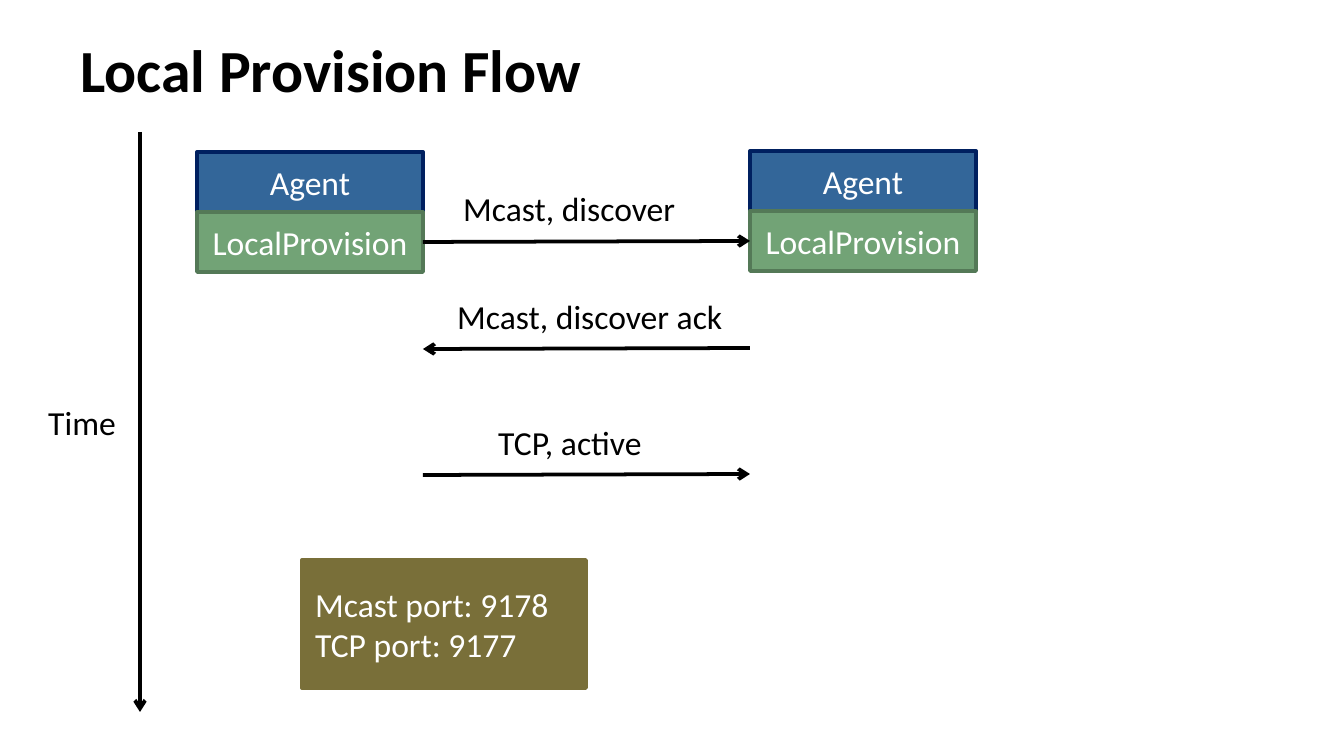
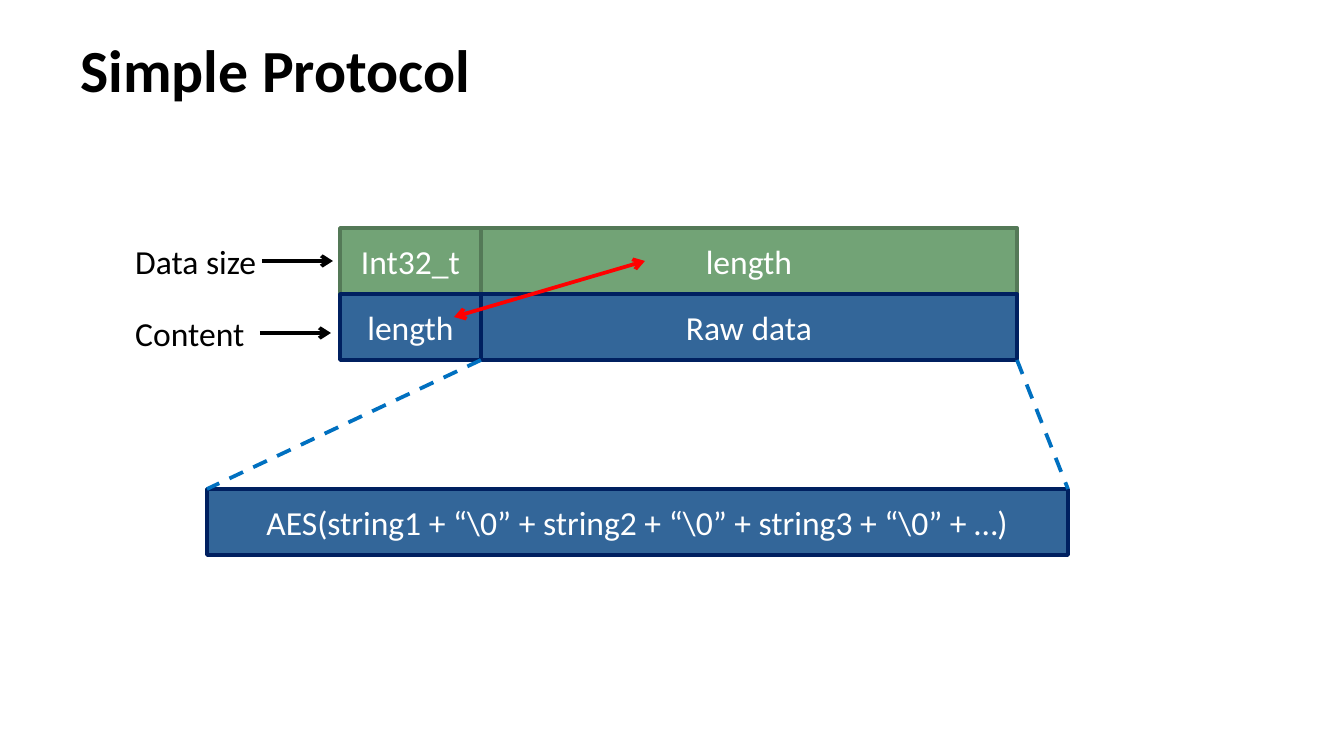
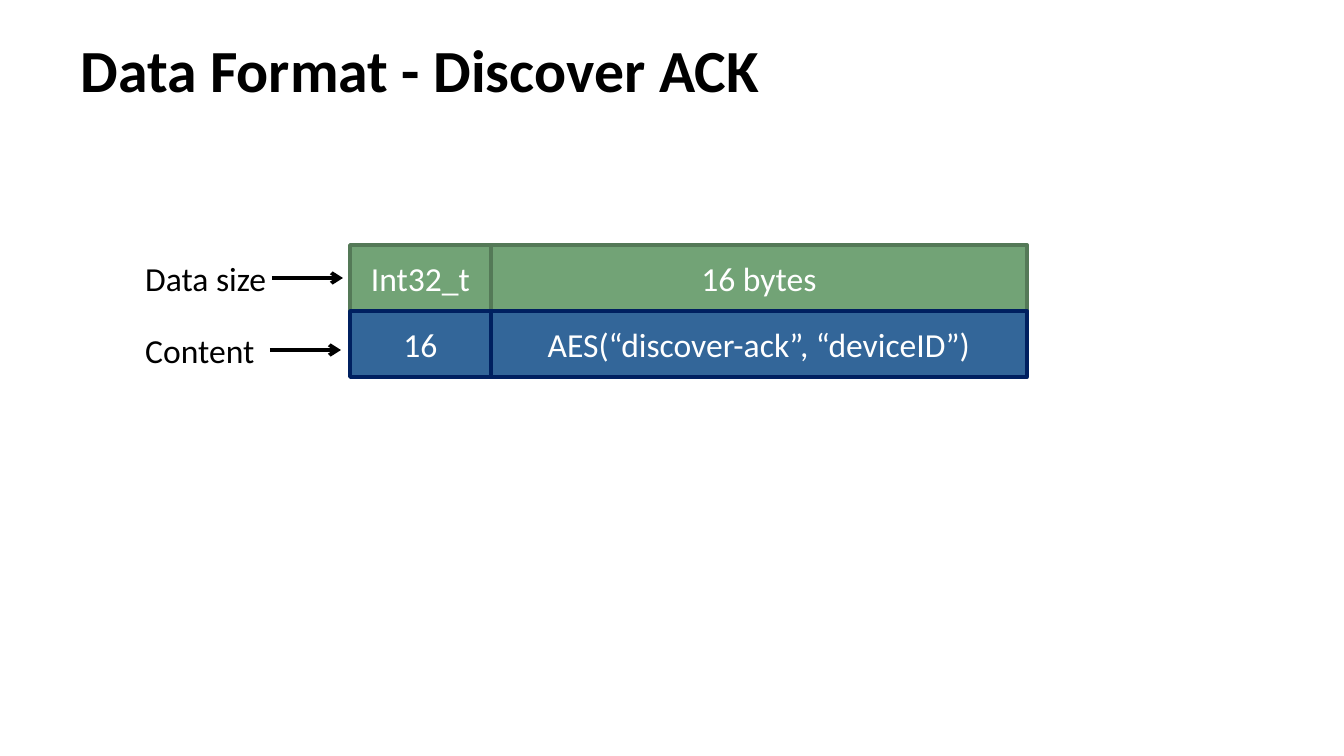
"""Build three slides on the local provision flow and its packet format."""
from lxml.etree import SubElement
from pptx import Presentation
from pptx.dml.color import RGBColor
from pptx.enum.dml import MSO_LINE
from pptx.enum.shapes import MSO_CONNECTOR, MSO_SHAPE
from pptx.enum.text import MSO_ANCHOR, MSO_AUTO_SIZE, PP_ALIGN
from pptx.oxml.ns import qn
from pptx.util import Pt

PX = 6804
FONT = "Calibri"
color = RGBColor.from_string
BLACK, WHITE, RED, DASH_BLUE = "000000", "FFFFFF", "FF0000", "0070C0"
BLUE = ("336699", "002060")
GREEN = ("72A376", "547957")
OLIVE = ("796F39", "796F39")


def add_block(slide, text, left, top, width, height=54, colors=None, align=PP_ALIGN.CENTER):
    """Add a filled rectangle, or a bare label when no colors are given."""
    area = [n * PX for n in (left, top, width, height)]
    if colors:
        block = slide.shapes.add_shape(MSO_SHAPE.RECTANGLE, *area)
        block.shadow.inherit = False
        block.fill.solid()
        block.fill.fore_color.rgb = color(colors[0])
        block.line.color.rgb = color(colors[1])
        block.line.width = Pt(2)
        block.text_frame.vertical_anchor = MSO_ANCHOR.MIDDLE
    else:
        block = slide.shapes.add_textbox(*area)
        block.text_frame.word_wrap = False
        block.text_frame.auto_size = MSO_AUTO_SIZE.SHAPE_TO_FIT_TEXT
    frame = block.text_frame
    for row, words in enumerate(text.split("\n")):
        paragraph = frame.add_paragraph() if row else frame.paragraphs[0]
        paragraph.alignment = align if colors else PP_ALIGN.LEFT
        run = paragraph.add_run()
        run.text = words
        run.font.name = FONT
        run.font.size = Pt(18)
        run.font.color.rgb = color(WHITE if colors else BLACK)
    return block


def add_line(slide, start, end, hue=BLACK, heads=("tailEnd",), dash=None):
    """Add a straight line with arrowheads at the named ends."""
    line = slide.shapes.add_connector(MSO_CONNECTOR.STRAIGHT, *[n * PX for n in start + end])
    line.line.color.rgb = color(hue)
    line.line.width = Pt(2)
    if dash:
        line.line.dash_style = dash
    properties = line._element.spPr
    for head in heads:
        SubElement(properties.find(qn("a:ln")), qn(f"a:{head}"), type="arrow")
    SubElement(properties, qn("a:effectLst"))
    return line


deck = Presentation()
deck.slide_width, deck.slide_height = 1344 * PX, 756 * PX

slides = []
for heading in ("Local Provision Flow", "Simple Protocol", "Data Format - Discover ACK"):
    slide = deck.slides.add_slide(deck.slide_layouts[5])
    title = slide.shapes.title
    title.left, title.top, title.width, title.height = 67 * PX, 13 * PX, 1210 * PX, 112 * PX
    title.text_frame.vertical_anchor = MSO_ANCHOR.MIDDLE
    title.text_frame.paragraphs[0].alignment = PP_ALIGN.LEFT
    run = title.text_frame.paragraphs[0].add_run()
    run.text = heading
    run.font.name = FONT
    run.font.size = Pt(32)
    run.font.bold = True
    run.font.color.rgb = color(BLACK)
    slides.append(slide)
flow, protocol, discover_ack = slides

provisions = []
for left, top in ((197, 152), (750, 151)):
    add_block(flow, "Agent", left, top, 226, 60, BLUE)
    provisions.append(add_block(flow, "LocalProvision", left, top + 60, 226, 60, GREEN))
discover = add_line(flow, (423, 242), (750, 241))
discover.begin_connect(provisions[0], 3)
discover.end_connect(provisions[1], 1)
add_line(flow, (423, 349), (750, 348), heads=("headEnd",))
add_line(flow, (423, 475), (750, 474))
add_line(flow, (140, 132), (140, 712))
for words, left, top, width in (
    ("Mcast, discover", 450, 181, 242),
    ("Mcast, discover ack", 444, 289, 296),
    ("TCP, active", 485, 415, 172),
    ("Time", 35, 395, 95),
):
    add_block(flow, words, left, top, width)
add_block(flow, "Mcast port: 9178\nTCP port: 9177", 302, 560, 284, 128, OLIVE, PP_ALIGN.LEFT)

for slide, left, top, packet in (
    (protocol, 340, 228, (("Int32_t", "length"), ("length", "Raw data"))),
    (discover_ack, 350, 245, (("Int32_t", "16 bytes"), ("16", "AES(“discover-ack”, “deviceID”)"))),
):
    for row, (size_field, data_field) in enumerate(packet):
        field_top, colors = top + 66 * row, (GREEN, BLUE)[row]
        add_block(slide, size_field, left, field_top, 141, 66, colors)
        add_block(slide, data_field, left + 141, field_top, 536, 66, colors)
    for row, (words, width) in enumerate((("Data size", 149), ("Content", 137))):
        add_block(slide, words, left - 218, top + 6 + 72 * row, width)
        arrow_left, arrow_top = left - 78 - 2 * row, top + 33 + 72 * row
        add_line(slide, (arrow_left, arrow_top), (arrow_left + 71, arrow_top))

add_line(protocol, (454, 317), (645, 261), RED, ("headEnd", "tailEnd"))
add_block(protocol, "AES(string1 + “\\0” + string2 + “\\0” + string3 + “\\0” + …)",
          207, 489, 861, 66, BLUE)
for field_corner, detail_corner in ((481, 207), (1017, 1068)):
    add_line(protocol, (field_corner, 360), (detail_corner, 489), DASH_BLUE, (), MSO_LINE.DASH)

deck.save("out.pptx")
